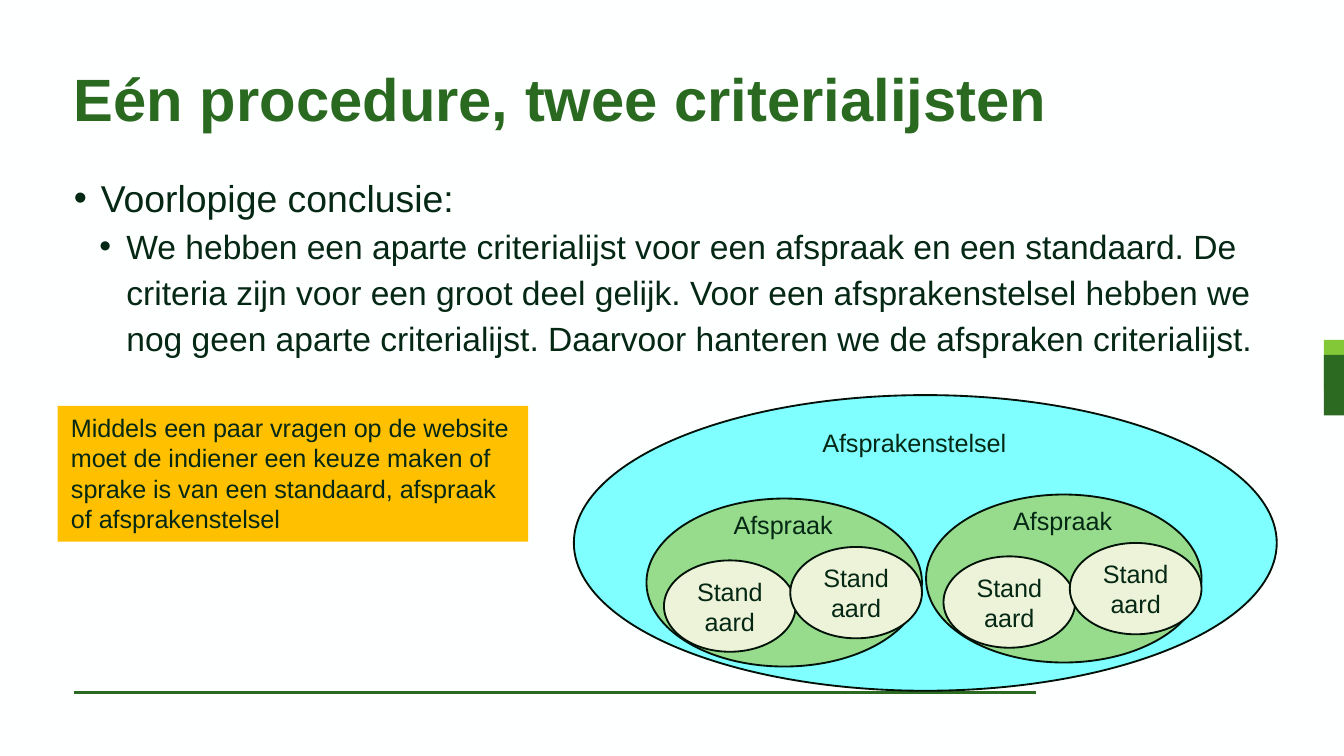
from pptx import Presentation
from pptx.dml.color import RGBColor
from pptx.enum import shapes, text
from pptx.util import Inches, Pt
from lxml import etree

INK, GREEN, OUTLINE = "052815", "2A6A20", "021209"
TITLE = "Eén procedure, twee criterialijsten"
BULLETS = [
    ("Voorlopige conclusie:", 20, 0.2),
    ("We hebben een aparte criterialijst voor een afspraak en een standaard. "
     "De criteria zijn voor een groot deel gelijk. Voor een afsprakenstelsel "
     "hebben we nog geen aparte criterialijst. Daarvoor hanteren we de "
     "afspraken criterialijst.", 18, 0.39),
]
NOTE = [
    "Middels een paar vragen op de website",
    "moet de indiener een keuze maken of",
    "sprake is van een standaard, afspraak",
    "of afsprakenstelsel",
]
ACCENTS = [("83C937", 2.53, 0.37), ("2B6A20", 2.64, 0.45)]
RULES = [(INK, 1), ("2B6A20", 1.5)]
AGREEMENTS = [(4.81, 3.71), (6.89, 3.68)]
STANDARD_OFFSETS = [(0.13, 0.46), (1.07, 0.36)]

deck = Presentation()
deck.slide_width = Inches(10)
deck.slide_height = deck.slide_width * 9 // 16
slide = deck.slides.add_slide(deck.slide_layouts[6])


def rgb(value):
    return RGBColor.from_string(value)


def apply(target, formats):
    for name, value in formats.items():
        setattr(target, name, value)


def style(paragraph, size, color=INK, bold=False):
    apply(paragraph.font, {"name": "Arial", "size": Pt(size), "bold": bold})
    paragraph.font.color.rgb = rgb(color)


def write(shape, lines, size=13.5, color=INK, bold=False,
          align=text.PP_ALIGN.LEFT, spacing=None, **frame_formats):
    frame = shape.text_frame
    apply(frame, frame_formats)
    for index, line in enumerate(lines):
        paragraph = frame.paragraphs[0] if index == 0 else frame.add_paragraph()
        paragraph.text = line
        apply(paragraph, {"alignment": align, "line_spacing": spacing})
        style(paragraph, size, color, bold)
    return frame


def add_box(left, top, width, height):
    return slide.shapes.add_textbox(*map(Inches, (left, top, width, height)))


def add_filled(kind, left, top, width, height, fill, outline=None):
    shape = slide.shapes.add_shape(kind, *map(Inches, (left, top, width, height)))
    shape.shadow.inherit = False
    shape.fill.solid()
    shape.fill.fore_color.rgb = rgb(fill)
    if outline:
        shape.line.color.rgb = rgb(outline)
        shape.line.width = Pt(1)
    else:
        shape.line.fill.background()
    return shape


def add_bullet(paragraph, indent):
    properties = paragraph._p.get_or_add_pPr()
    properties.set("marL", str(Inches(indent)))
    properties.set("indent", str(Inches(-0.2)))
    namespace = properties.nsmap["a"]
    etree.SubElement(properties, f"{{{namespace}}}buFont", typeface="Arial")
    etree.SubElement(properties, f"{{{namespace}}}buChar", char="•")


RECTANGLE = shapes.MSO_SHAPE.RECTANGLE
OVAL = shapes.MSO_SHAPE.OVAL
NO_INSETS = dict.fromkeys(
    ("margin_left", "margin_top", "margin_right", "margin_bottom"), 0)

background = slide.background.fill
background.solid()
background.fore_color.rgb = rgb("FEFFFF")

for fill, top, height in ACCENTS:
    add_filled(RECTANGLE, 9.85, top, 0.15, height, fill)

for color, width in RULES:
    rule = slide.shapes.add_connector(
        shapes.MSO_CONNECTOR.STRAIGHT,
        *map(Inches, (0.55, 5.15, 7.71, 5.15)))
    rule.line.color.rgb = rgb(color)
    rule.line.width = Pt(width)
    drawing = rule._element.spPr
    etree.SubElement(drawing, f"{{{drawing.nsmap['a']}}}effectLst")

write(add_box(0.55, 0.28, 8.82, 0.98), [TITLE], 32, GREEN, True, spacing=0.85,
      word_wrap=True, vertical_anchor=text.MSO_ANCHOR.MIDDLE, **NO_INSETS)

conclusion = write(add_box(0.55, 1.26, 8.82, 3.7), [line for line, _, _ in BULLETS],
                   spacing=1.14, word_wrap=True, **NO_INSETS)
for paragraph, (_, size, indent) in zip(conclusion.paragraphs, BULLETS):
    add_bullet(paragraph, indent)
    style(paragraph, size)

add_filled(OVAL, 4.27, 2.94, 5.23, 2.2, "7FFFFF", OUTLINE)
write(add_box(6.02, 3.13, 1.59, 0.33), ["Afsprakenstelsel"], word_wrap=False)

for left, top in AGREEMENTS:
    add_filled(OVAL, left, top, 2.05, 1.25, "97DC8D", OUTLINE)
    write(add_box(left + 0.55, top + 0.03, 0.95, 0.33), ["Afspraak"],
          word_wrap=False)
    for across, down in STANDARD_OFFSETS:
        standard = add_filled(OVAL, left + across, top + down, 0.98, 0.68,
                              "EDF3D8", OUTLINE)
        write(standard, ["Standaard"], align=text.PP_ALIGN.CENTER,
              word_wrap=True, vertical_anchor=text.MSO_ANCHOR.MIDDLE)

note = add_filled(RECTANGLE, 0.43, 3.02, 3.5, 1.01, "FFC000")
write(note, NOTE, word_wrap=False, vertical_anchor=text.MSO_ANCHOR.TOP)

deck.save("out.pptx")
